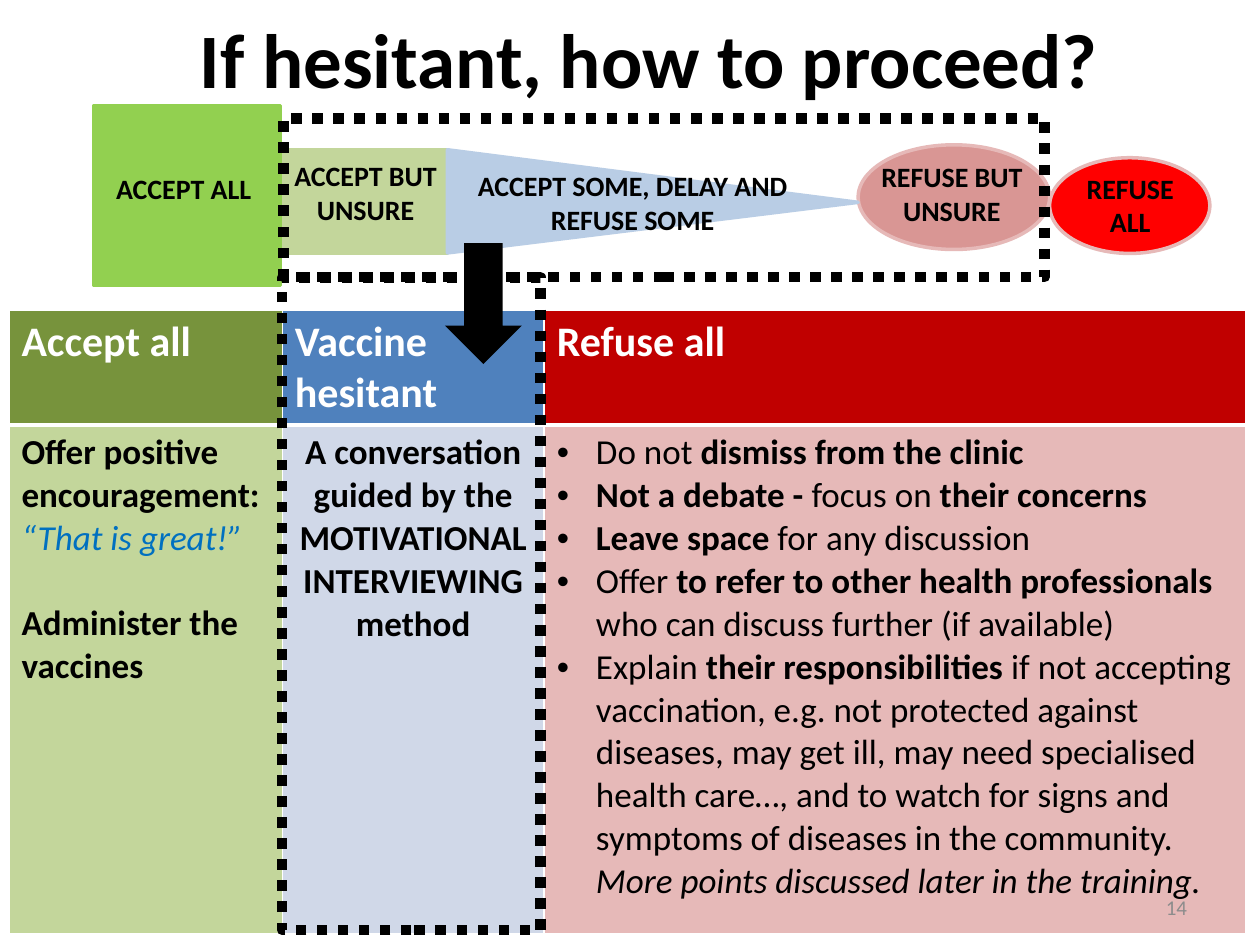
from lxml.etree import SubElement
from pptx import Presentation
from pptx.dml.color import RGBColor
from pptx.enum.dml import MSO_LINE
from pptx.enum.shapes import MSO_SHAPE as Shape
from pptx.enum.text import MSO_ANCHOR as Anchor, PP_ALIGN as Align
from pptx.oxml.ns import qn
from pptx.util import Cm, Pt

FONT = "Calibri"
BLACK, WHITE, PINK, LIME = "000000", "FFFFFF", "E6B9B8", "C3D69B"
BOLD = {"bold": True}
ITALIC = {"italic": True}
PLAIN = {}

HEADERS = [("Accept all", "77933C"), ("Vaccine hesitant", "4F81BD"), ("Refuse all", "C00000")]
BODY_FILLS = [LIME, "D0D8E8", PINK]
REFUSAL_POINTS = [
    [("Do not ", PLAIN), ("dismiss from the clinic", BOLD)],
    [("Not a debate - ", BOLD), ("focus on ", PLAIN), ("their concerns", BOLD)],
    [("Leave space ", BOLD), ("for any discussion", PLAIN)],
    [("Offer ", PLAIN), ("to refer to other health professionals ", BOLD),
     ("who can discuss further (if available)", PLAIN)],
    [("Explain ", PLAIN), ("their responsibilities ", BOLD),
     ("if not accepting vaccination, e.g. not protected against diseases, may get ill, "
      "may need specialised health care…, and to watch for signs and symptoms of "
      "diseases in the community.", PLAIN)],
]


def rgb(color):
    return RGBColor.from_string(color)


def add_run(p, text, size, color=BLACK, bold=False, italic=False):
    r = p.add_run()
    r.text = text
    for name, value in {"name": FONT, "size": Pt(size), "bold": bold, "italic": italic}.items():
        setattr(r.font, name, value)
    r.font.color.rgb = rgb(color)


def add_text(s, text, box, size=16, color=BLACK, bold=True, align=Align.CENTER, anchor=Anchor.TOP):
    """Add a wrapping text box with one paragraph per line of text."""
    tf = s.shapes.add_textbox(*map(Cm, box)).text_frame
    tf.word_wrap = True
    tf.vertical_anchor = anchor
    for i, line in enumerate(text.split("\n")):
        p = tf.add_paragraph() if i else tf.paragraphs[0]
        p.alignment = align
        add_run(p, line, size, color, bold)


def add_shape(s, kind, box, fill, line=None):
    sp = s.shapes.add_shape(kind, *map(Cm, box))
    sp.shadow.inherit = False
    sp.fill.solid()
    sp.fill.fore_color.rgb = rgb(fill)
    if line:
        sp.line.color.rgb = rgb(line)
        sp.line.width = Pt(2)
    else:
        sp.line.fill.background()
    return sp


def add_dotted_frame(s, box):
    sp = add_shape(s, Shape.RECTANGLE, box, WHITE, BLACK)
    sp.fill.background()
    sp.line.width = Pt(6)
    sp.line.dash_style = MSO_LINE.ROUND_DOT


def style_cell(cell, fill, bottom=1):
    """Give the cell white borders and a plain fill; widths are in points."""
    tc_pr = cell._tc.get_or_add_tcPr()
    for side, width in {"L": 1, "R": 1, "T": 1, "B": bottom}.items():
        ln = SubElement(tc_pr, qn(f"a:ln{side}"), w=str(Pt(width)))
        SubElement(SubElement(ln, qn("a:solidFill")), qn("a:srgbClr"), val=WHITE)
    cell.fill.solid()
    cell.fill.fore_color.rgb = rgb(fill)


def indent(p, bullet=True):
    p_pr = p._p.get_or_add_pPr()
    p_pr.set("marL", str(Cm(0.79)))
    if bullet:
        p_pr.set("indent", str(-Cm(0.79)))
        SubElement(p_pr, qn("a:buFont"), typeface="Arial")
        SubElement(p_pr, qn("a:buChar"), char="•")


def fill_advice(accept, hesitant, refuse):
    p = accept.paragraphs[0]
    add_run(p, "Offer positive encouragement:", 20, bold=True)
    p.add_line_break()
    add_run(p, "“That is great!”", 20, "0070C0", italic=True)
    p = accept.add_paragraph()
    p.space_before = Pt(24)
    add_run(p, "Administer the vaccines", 20, bold=True)

    p = hesitant.paragraphs[0]
    p.alignment = Align.CENTER
    add_run(p, "A conversation guided by the MOTIVATIONAL INTERVIEWING method", 20, bold=True)

    for i, runs in enumerate(REFUSAL_POINTS):
        p = refuse.add_paragraph() if i else refuse.paragraphs[0]
        indent(p)
        for text, style in runs:
            add_run(p, text, 20, **style)
    p = refuse.add_paragraph()
    indent(p, bullet=False)
    add_run(p, "More points discussed later in the training.", 20, **ITALIC)


def add_advice_table(s):
    widths, heights = [5.51, 5.28, 14.15], [2.26, 10.26]
    box = (0.18, 6.25, sum(widths), sum(heights))
    table = s.shapes.add_table(2, 3, *map(Cm, box)).table
    for col, width in zip(table.columns, widths):
        col.width = Cm(width)
    for row, height in zip(table.rows, heights):
        row.height = Cm(height)
    for i, (text, fill) in enumerate(HEADERS):
        head, body = table.cell(0, i), table.cell(1, i)
        style_cell(head, fill, bottom=3)
        add_run(head.text_frame.paragraphs[0], text, 24, WHITE, bold=True)
        style_cell(body, BODY_FILLS[i])
    fill_advice(*(table.cell(1, i).text_frame for i in range(3)))


def add_continuum(s):
    """Draw the scale from full acceptance to full refusal."""
    for kind, box, fill, line in [
        (Shape.RECTANGLE, (5.59, 3.02, 3.43, 2.08), LIME, LIME),
        (Shape.OVAL, (17.3, 2.92, 3.86, 2.11), "D99694", PINK),
        (Shape.OVAL, (21.16, 3.18, 3.23, 1.93), "FF0000", PINK),
        (Shape.RECTANGLE, (1.9, 2.13, 3.76, 3.63), "92D050", "92D050"),
    ]:
        add_shape(s, kind, box, fill, line)
    wedge = add_shape(s, Shape.ISOSCELES_TRIANGLE, (12.12, -0.08, 2.08, 8.28), "B9CDE5", "B9CDE5")
    wedge.rotation = 90
    wedge.adjustments[0] = 0.51
    for text, box in [
        ("ACCEPT ALL", (1.7, 3.33, 4.01, 0.94)),
        ("ACCEPT SOME, DELAY AND REFUSE SOME", (8.97, 3.28, 7.57, 1.63)),
        ("ACCEPT BUT UNSURE", (5.21, 3.07, 4.32, 1.63)),
        ("REFUSE\nALL", (21.06, 3.33, 3.45, 1.63)),
        ("REFUSE BUT UNSURE", (17.22, 3.1, 3.94, 1.63)),
    ]:
        add_text(s, text, box)


def main():
    prs = Presentation()
    prs.slide_width, prs.slide_height = Cm(25.4), Cm(19.05)
    s = prs.slides.add_slide(prs.slide_layouts[6])
    add_advice_table(s)
    add_text(s, "If hesitant, how to proceed?", (1.5, 0.1, 23.19, 2.13), size=44)
    add_continuum(s)
    add_dotted_frame(s, (5.69, 5.59, 5.21, 13.16))
    add_dotted_frame(s, (5.72, 2.39, 15.34, 3.2))
    add_text(s, "14", (18.26, 17.78, 5.92, 1.02), size=12, color="8C8C8C", bold=False,
             align=Align.RIGHT, anchor=Anchor.MIDDLE)
    add_shape(s, Shape.DOWN_ARROW, (8.97, 4.9, 1.55, 2.44), BLACK)
    prs.save("out.pptx")


if __name__ == "__main__":
    main()
